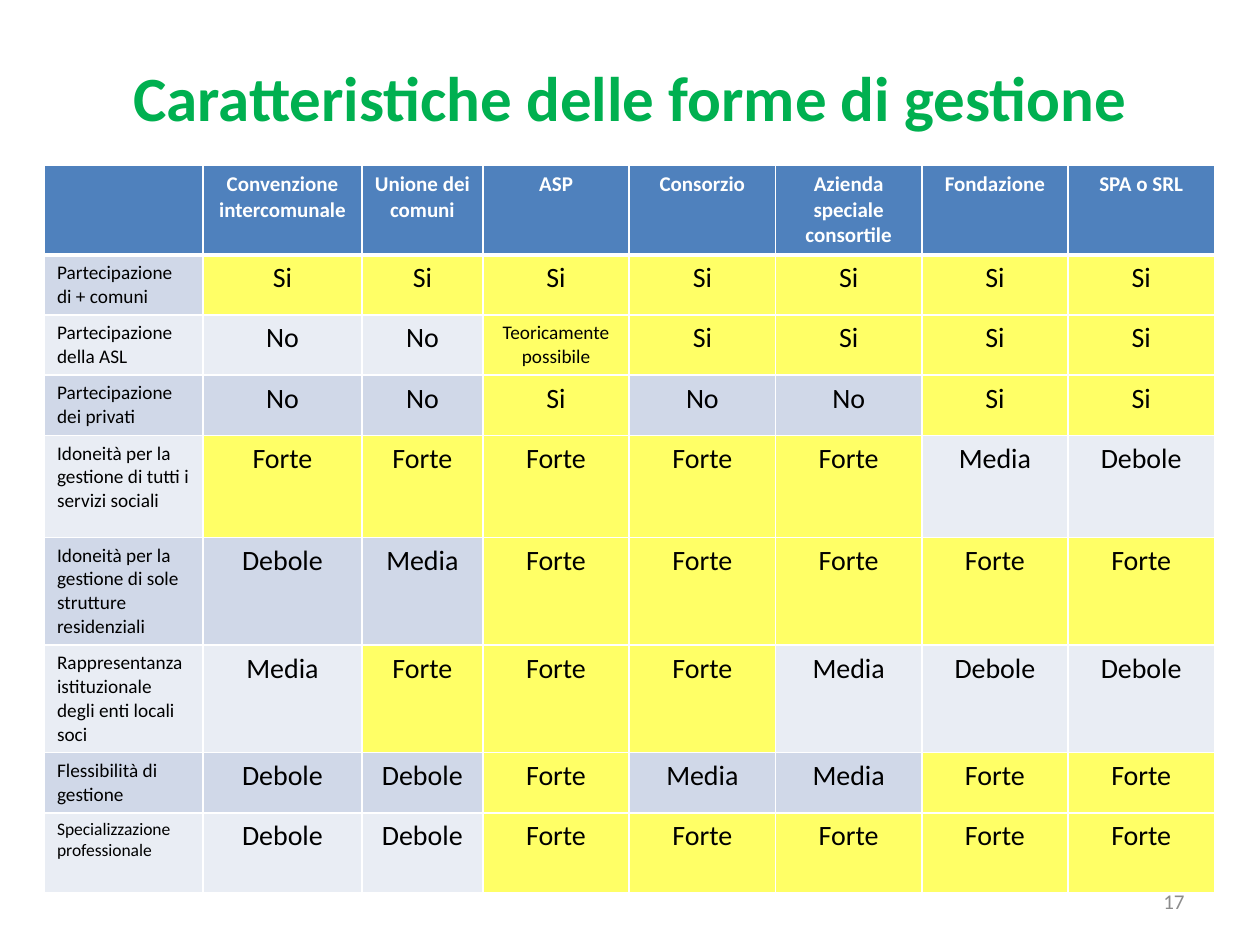
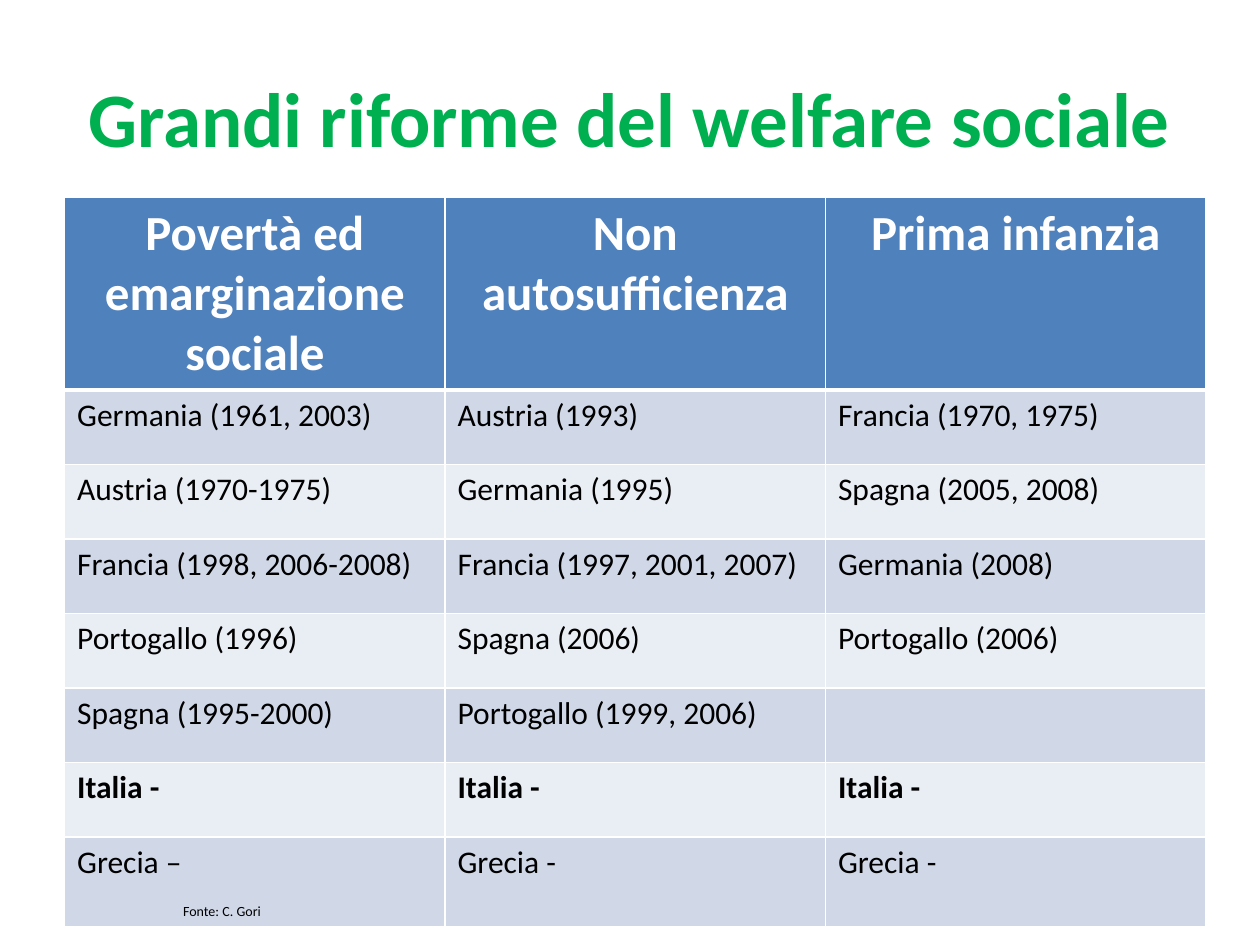
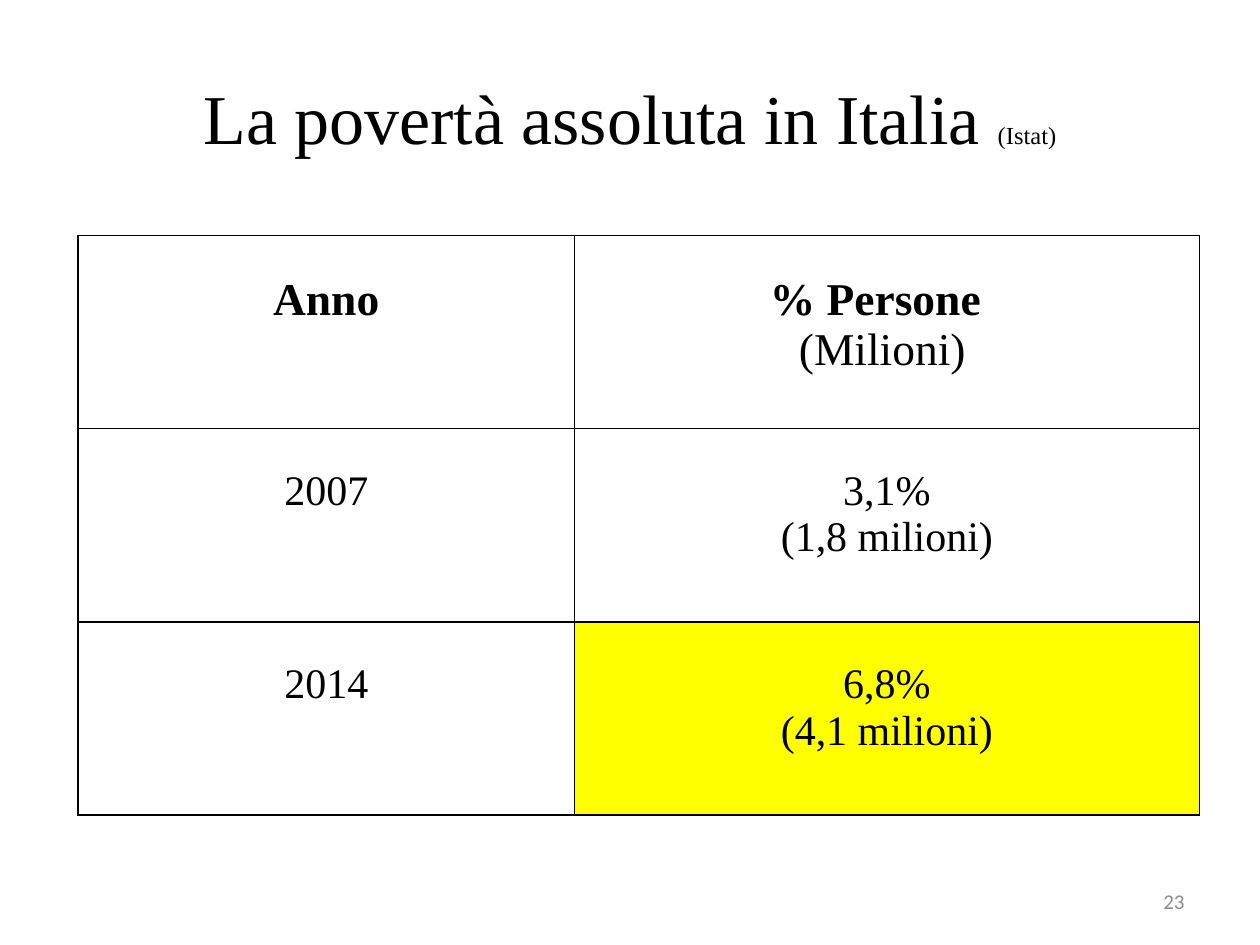
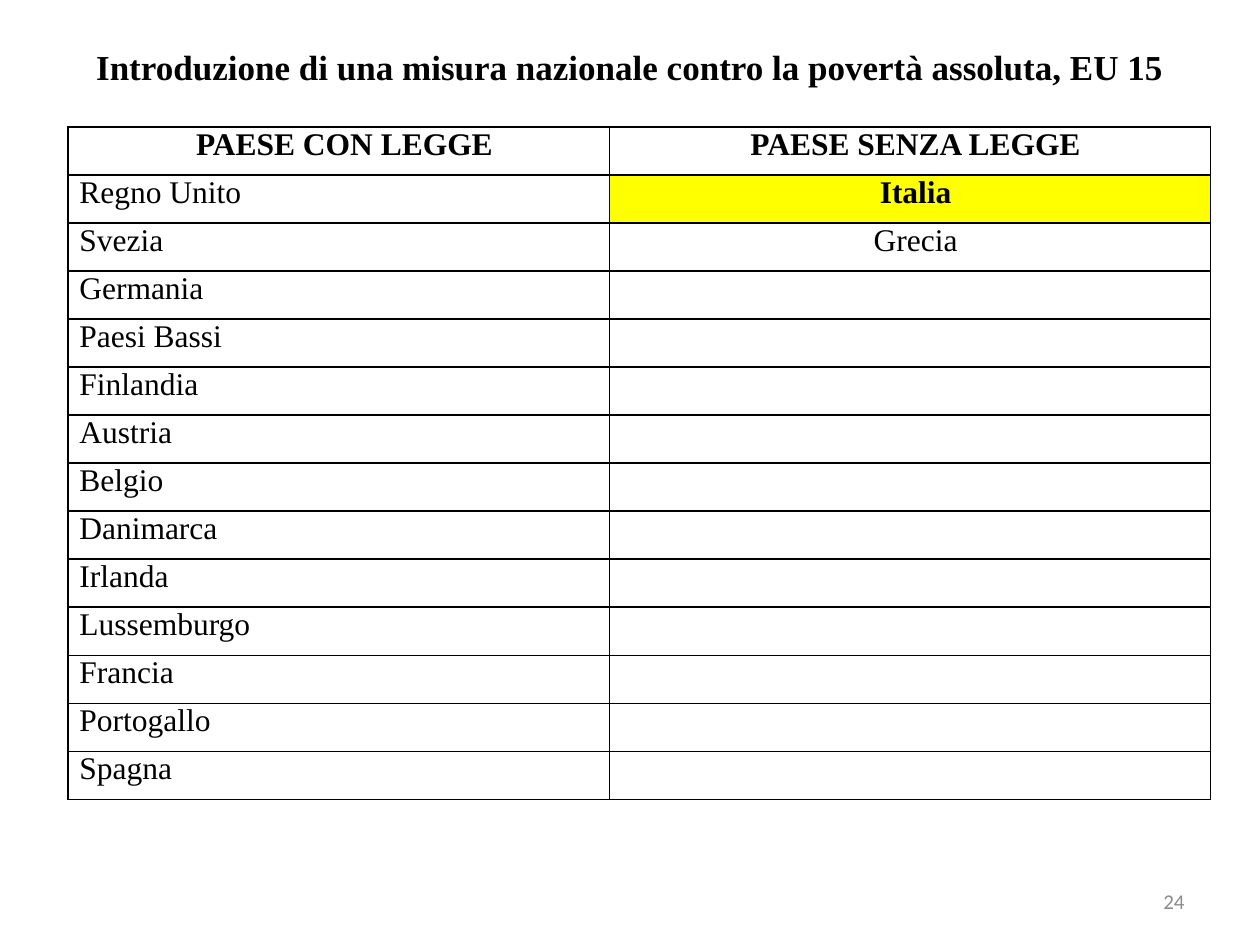
from dataclasses import dataclass

from lxml import etree
from pptx import Presentation
from pptx.dml.color import RGBColor
from pptx.enum.text import MSO_ANCHOR, MSO_AUTO_SIZE, PP_ALIGN
from pptx.oxml.ns import qn
from pptx.util import Pt

LEFT, CENTER, RIGHT = PP_ALIGN.LEFT, PP_ALIGN.CENTER, PP_ALIGN.RIGHT
MIDDLE = MSO_ANCHOR.MIDDLE
NO_AUTOFIT = MSO_AUTO_SIZE.NONE
TITLE_ONLY_LAYOUT = 5


@dataclass(frozen=True)
class Theme:
    sans: str = "Calibri"
    serif: str = "Times New Roman"
    black: str = "000000"
    white: str = "FFFFFF"
    green: str = "00B050"
    header: str = "4F81BD"
    bands: tuple = ("D0D8E8", "E9EDF4")
    favourable: str = "FFFF66"
    highlight: str = "FFFF00"
    muted: str = "8C8C8C"
    page_number_size: float = 12
    source_size: float = 8
    title_note_size: float = 14
    thin_line: float = 1
    header_line: float = 3


THEME = Theme()


@dataclass(frozen=True)
class TextStyle:
    size: float
    font: str = THEME.sans
    color: str = THEME.black
    bold: bool = False
    align: PP_ALIGN = LEFT


@dataclass(frozen=True)
class CellStyle:
    text: TextStyle
    fill: str = ""
    line_color: str = THEME.white
    top_line: float = THEME.thin_line
    bottom_line: float = THEME.thin_line
    margins: tuple = (7.2, 3.6, 7.2, 3.6)


PAGE_NUMBER_BOX = (516, 500.5, 168, 28.75)

MANAGEMENT_ROWS = [
    ["", "Convenzione\nintercomunale", "Unione dei comuni", "ASP", "Consorzio",
     "Azienda speciale consortile", "Fondazione", "SPA o SRL"],
    ["Partecipazione di + comuni"] + ["Si"] * 7,
    ["Partecipazione della ASL", "No", "No", "Teoricamente possibile"] + ["Si"] * 4,
    ["Partecipazione dei privati", "No", "No", "Si", "No", "No", "Si", "Si"],
    ["Idoneità per la gestione di tutti i servizi sociali"] + ["Forte"] * 5 + ["Media", "Debole"],
    ["Idoneità per la gestione di sole strutture residenziali", "Debole", "Media"] + ["Forte"] * 5,
    ["Rappresentanza istituzionale degli enti locali soci", "Media", "Forte", "Forte", "Forte",
     "Media", "Debole", "Debole"],
    ["Flessibilità di gestione", "Debole", "Debole", "Forte", "Media", "Media", "Forte", "Forte"],
    ["Specializzazione professionale", "Debole", "Debole"] + ["Forte"] * 5,
]
FAVOURABLE_VALUES = {"Si", "Forte", "Teoricamente possibile"}

REFORM_ROWS = [
    ["Povertà ed emarginazione sociale", "Non autosufficienza", "Prima infanzia"],
    ["Germania (1961, 2003)", "Austria (1993)", "Francia (1970, 1975)"],
    ["Austria (1970-1975)", "Germania (1995)", "Spagna (2005, 2008)"],
    ["Francia (1998, 2006-2008)", "Francia (1997, 2001, 2007)", "Germania (2008)"],
    ["Portogallo (1996)", "Spagna (2006)", "Portogallo (2006)"],
    ["Spagna (1995-2000)", "Portogallo (1999, 2006)", ""],
    ["Italia -"] * 3,
    ["Grecia –", "Grecia -", "Grecia -"],
]

POVERTY_ROWS = [
    ["Anno", "% Persone"],
    ["2007", "3,1%\n(1,8 milioni)"],
    ["2014", "6,8%\n(4,1 milioni)"],
]

COUNTRIES_WITH_LAW = ["Regno Unito", "Svezia", "Germania", "Paesi Bassi", "Finlandia", "Austria",
                      "Belgio", "Danimarca", "Irlanda", "Lussemburgo", "Francia", "Portogallo",
                      "Spagna"]
COUNTRIES_WITHOUT_LAW = ["Italia", "Grecia"]


def points(values):
    return [Pt(value) for value in values]


def format_paragraph(paragraph, style):
    paragraph.alignment = style.align
    font = paragraph.font
    font.name, font.size, font.bold = style.font, Pt(style.size), style.bold
    font.color.rgb = RGBColor.from_string(style.color)


def indent_paragraph(paragraph, left, first_line=0):
    properties = paragraph._p.get_or_add_pPr()
    properties.set("marL", str(Pt(left)))
    properties.set("indent", str(Pt(first_line)))


def add_page(presentation, title, box, style, margins=(7.2, 3.6, 7.2, 3.6)):
    """Add a slide with its title and return the slide."""
    slide = presentation.slides.add_slide(presentation.slide_layouts[TITLE_ONLY_LAYOUT])
    shape = slide.shapes.title
    shape.left, shape.top, shape.width, shape.height = points(box)
    frame = shape.text_frame
    frame.text = title
    frame.auto_size, frame.vertical_anchor = NO_AUTOFIT, MIDDLE
    (frame.margin_left, frame.margin_top,
     frame.margin_right, frame.margin_bottom) = points(margins)
    format_paragraph(frame.paragraphs[0], style)
    return slide


def add_page_number(slide, number):
    frame = slide.shapes.add_textbox(*points(PAGE_NUMBER_BOX)).text_frame
    frame.word_wrap, frame.vertical_anchor = True, MIDDLE
    frame.text = str(number)
    style = TextStyle(THEME.page_number_size, color=THEME.muted, align=RIGHT)
    format_paragraph(frame.paragraphs[0], style)


def set_borders(cell, style):
    properties = cell._tc.get_or_add_tcPr()
    widths = {"L": THEME.thin_line, "R": THEME.thin_line,
              "T": style.top_line, "B": style.bottom_line}
    for side, width in widths.items():
        line = etree.SubElement(properties, qn(f"a:ln{side}"), w=str(Pt(width)))
        fill = etree.SubElement(line, qn("a:solidFill"))
        etree.SubElement(fill, qn("a:srgbClr"), val=style.line_color)


def fill_cell(cell, text, style):
    cell.text = text
    (cell.margin_left, cell.margin_top,
     cell.margin_right, cell.margin_bottom) = points(style.margins)
    for paragraph in cell.text_frame.paragraphs:
        format_paragraph(paragraph, style.text)
    set_borders(cell, style)
    if style.fill:
        cell.fill.solid()
        cell.fill.fore_color.rgb = RGBColor.from_string(style.fill)
    else:
        cell.fill.background()


def add_grid(slide, origin, column_widths, row_heights, rows, choose_style):
    """Add a table; choose_style(row, column, text) gives the look of each cell."""
    size = (sum(column_widths), sum(row_heights))
    frame = slide.shapes.add_table(len(rows), len(column_widths), *points(origin + size))
    table = frame.table
    table.first_row = table.horz_banding = False
    for column, width in zip(table.columns, column_widths):
        column.width = Pt(width)
    for row, height in zip(table.rows, row_heights):
        row.height = Pt(height)
    for row, texts in enumerate(rows):
        for column, text in enumerate(texts):
            fill_cell(table.cell(row, column), text, choose_style(row, column, text))
    return table


def banded_style(row, header_size, body, favourable=False):
    """Blue header over two alternating bands, with white lines."""
    if row == 0:
        text = TextStyle(header_size, color=THEME.white, bold=True, align=CENTER)
        return CellStyle(text, THEME.header, bottom_line=THEME.header_line)
    fill = THEME.favourable if favourable else THEME.bands[(row - 1) % 2]
    top_line = THEME.header_line if row == 1 else THEME.thin_line
    return CellStyle(body, fill, top_line=top_line)


def management_style(row, column, text):
    if column == 0:
        body = TextStyle(10 if row == len(MANAGEMENT_ROWS) - 1 else 11)
    else:
        body = TextStyle(11 if len(text) > 6 else 16, align=CENTER)
    return banded_style(row, 12, body, text in FAVOURABLE_VALUES)


def reform_style(row, column, text):
    return banded_style(row, 28, TextStyle(18, bold=text.startswith("Italia")))


def poverty_style(row, column, text):
    header = row == 0
    body = TextStyle(26 if header else 24, THEME.serif, bold=header, align=CENTER)
    fill = THEME.highlight if (row, column) == (2, 1) else ""
    return CellStyle(body, fill, THEME.black, margins=(0, 22.5, 0, 0))


def law_style(row, column, text):
    italy = text == "Italia"
    align = CENTER if row == 0 or column == 1 else LEFT
    body = TextStyle(18, THEME.serif, bold=row == 0 or italy, align=align)
    fill = THEME.highlight if italy else ""
    return CellStyle(body, fill, THEME.black, margins=(6.5, 0, 0, 0))


def build_management_forms(presentation):
    slide = add_page(presentation, "Caratteristiche delle forme di gestione", (36, 21.6, 648, 67),
                     TextStyle(36, color=THEME.green, bold=True, align=CENTER))
    add_grid(slide, (25.4, 94.5), [90.7, 90.7, 69.2] + [83.6] * 5,
             [45.4] + [32.4] * 3 + [58.3, 58.3, 59, 33.1, 45.4], MANAGEMENT_ROWS, management_style)
    add_page_number(slide, 17)


def build_welfare_reforms(presentation):
    slide = add_page(presentation, "Grandi riforme del welfare sociale", (36, 21.6, 648, 90),
                     TextStyle(44, color=THEME.green, bold=True, align=CENTER))
    table = add_grid(slide, (36.9, 113), [217.4] * 3, [74.9] + [42.6] * 7,
                     REFORM_ROWS, reform_style)
    source = table.cell(len(REFORM_ROWS) - 1, 0).text_frame.add_paragraph()
    source.text = "Fonte: C. Gori"
    source.space_before = Pt(12)
    format_paragraph(source, TextStyle(THEME.source_size))
    indent_paragraph(source, 60.5)


def build_absolute_poverty(presentation):
    slide = add_page(presentation, "La povertà assoluta in Italia ", (36, 42.5, 648, 48.2),
                     TextStyle(40, THEME.serif, align=CENTER), margins=(0, 0, 0, 0))
    note = slide.shapes.title.text_frame.paragraphs[0].add_run()
    note.text = "(Istat)"
    note.font.size = Pt(THEME.title_note_size)

    table = add_grid(slide, (44.6, 134.6), [283.7, 357.1], [110.4] * 3,
                     POVERTY_ROWS, poverty_style)
    heading = table.cell(0, 1).text_frame.paragraphs[0]
    heading.alignment = LEFT
    indent_paragraph(heading, 128.2, -16.6)
    heading.add_line_break()
    unit = heading.add_run()
    unit.text = "(Milioni)"
    unit.font.bold = False
    add_page_number(slide, 23)


def build_national_laws(presentation):
    slide = add_page(presentation, "Introduzione di una misura nazionale contro la povertà assoluta, EU 15",
                     (48.2, 26, 623.5, 24.5),
                     TextStyle(20, THEME.serif, bold=True, align=CENTER), margins=(0, 0, 0, 0))
    missing = [""] * (len(COUNTRIES_WITH_LAW) - len(COUNTRIES_WITHOUT_LAW))
    rows = [("PAESE CON LEGGE", "PAESE SENZA LEGGE")]
    rows += zip(COUNTRIES_WITH_LAW, COUNTRIES_WITHOUT_LAW + missing)
    add_grid(slide, (38.9, 72.6), [309.5, 343.2], [27.45] * len(rows), rows, law_style)
    add_page_number(slide, 24)


def main():
    presentation = Presentation()
    presentation.slide_width, presentation.slide_height = Pt(720), Pt(540)
    build_management_forms(presentation)
    build_welfare_reforms(presentation)
    build_absolute_poverty(presentation)
    build_national_laws(presentation)
    presentation.save("out.pptx")


if __name__ == "__main__":
    main()
